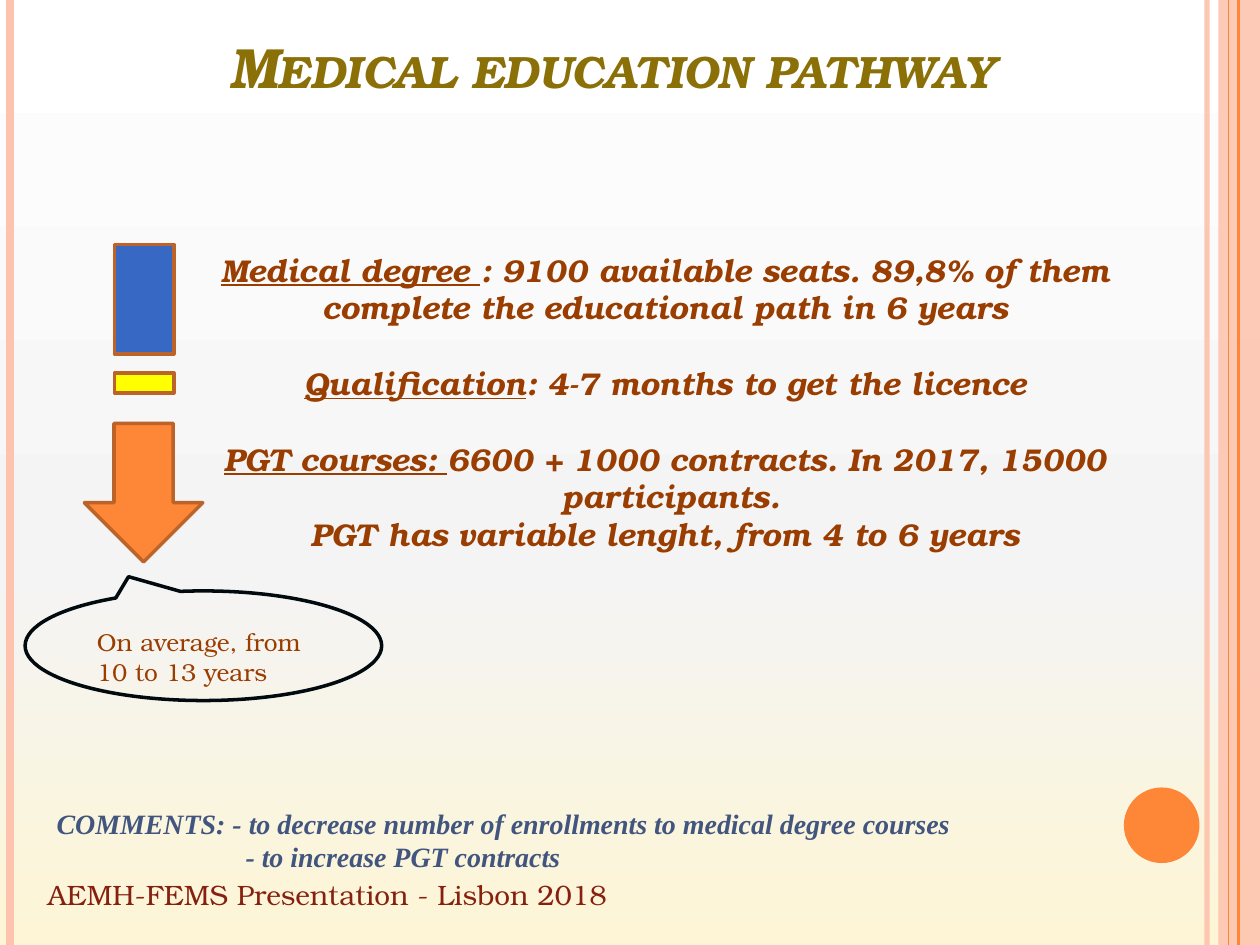
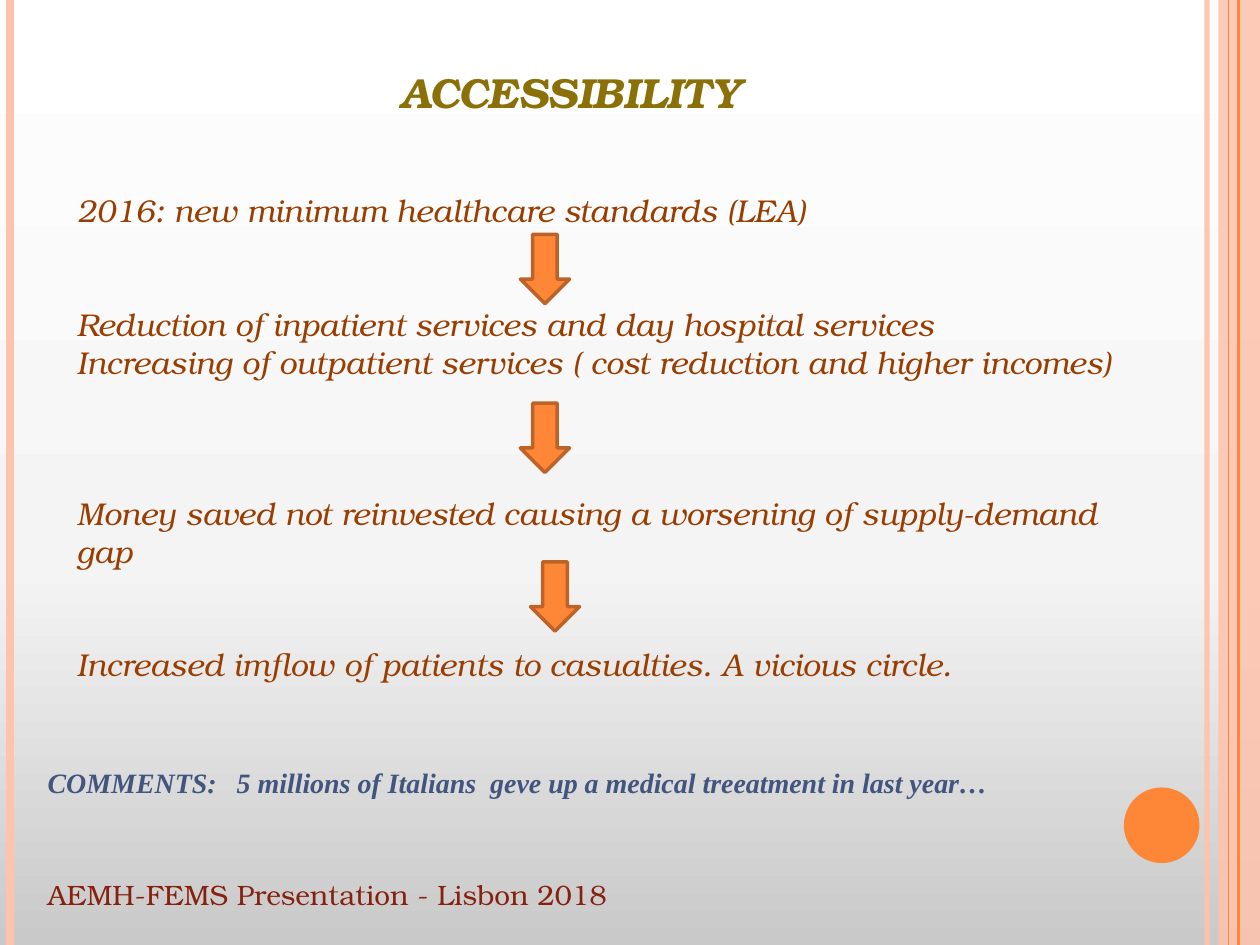
from lxml.etree import SubElement
from pptx import Presentation
from pptx.dml.color import RGBColor
from pptx.enum.shapes import MSO_CONNECTOR, MSO_SHAPE
from pptx.enum.text import MSO_ANCHOR, MSO_AUTO_SIZE, PP_ALIGN
from pptx.oxml.ns import qn
from pptx.util import Inches, Pt

# Colours and fonts
ORANGE = RGBColor(0xFE, 0x86, 0x37)
DARK_ORANGE = RGBColor(0xBC, 0x63, 0x29)
PEACH = RGBColor(0xFE, 0xC3, 0xAE)
OLIVE = RGBColor(0x8A, 0x70, 0x07)
BROWN = RGBColor(0x9A, 0x3D, 0x01)
RED_BROWN = RGBColor(0x86, 0x21, 0x10)
SLATE = RGBColor(0x42, 0x55, 0x7F)
BLUE = RGBColor(0x36, 0x68, 0xC4)
YELLOW = RGBColor(0xFF, 0xFF, 0x00)
INK = RGBColor(0x00, 0x0A, 0x0F)
CREAM = RGBColor(0xFD, 0xF5, 0xD5)
GREY = RGBColor(0xC9, 0xC9, 0xC9)
PALE_GREY = RGBColor(0xF4, 0xF4, 0xF4)
WHITE = RGBColor(0xFF, 0xFF, 0xFF)
SERIF = "TeX Gyre Bonum"
TIMES = "Times New Roman"

SLIDE_WIDTH, SLIDE_HEIGHT = 10, 7.5
BODY_LINE = 21.6  # points taken by one line of body text
COMMENT_INDENT = 1.5

# Text formats
TITLE = {"name": SERIF, "bold": True, "italic": True}
BODY = {"name": SERIF, "size": Pt(18), "italic": True}
STRONG_BODY = {**BODY, "bold": True}
FOOTER = {"name": SERIF, "size": Pt(16)}
CALLOUT = {"name": SERIF, "size": Pt(14)}
COMMENT = {"name": TIMES, "size": Pt(16), "bold": True, "italic": True}

# Shared content: x, colour, width in points, opacity in percent
FOOTER_TEXT = "AEMH-FEMS Presentation - Lisbon 2018"
STRIPES = [(9.58, PEACH, 3, 93), (0.08, PEACH, 4.5, 100),
           (9.83, ORANGE, 1.5, 100), (9.75, ORANGE, 0.75, 100)]

# Pathway content: underlined lead, remaining text, lines left free above
PATHWAY_STEPS = [
    ("Medical degree ", ": 9100 available seats. 89,8% of them complete "
     "the educational path in 6 years", 0),
    ("Qualification", ": 4-7 months to get the licence", 1),
    ("PGT courses: ", "6600 + 1000 contracts. In 2017, 15000", 1),
    ("", " participants.", 0),
    ("", "PGT has variable lenght, from 4 to 6 years", 0),
]
PATHWAY_BLOCKS = [
    (MSO_SHAPE.RECTANGLE, (0.91, 1.94, 0.47, 0.87), BLUE),
    (MSO_SHAPE.RECTANGLE, (0.91, 2.96, 0.47, 0.16), YELLOW),
    (MSO_SHAPE.DOWN_ARROW, (0.67, 3.36, 0.94, 1.1), ORANGE),
]
DURATION = "On average, from 10 to 13 years"
PATHWAY_COMMENTS = [
    "COMMENTS: - to decrease number of enrollments to medical degree courses",
    "\t- to increase PGT contracts",
]

# Accessibility content
ACCESS_STEPS = [
    ("", "2016: new minimum healthcare standards (LEA)", 0),
    ("", "Reduction of inpatient services and day hospital services", 2),
    ("", "Increasing of outpatient services ( cost reduction and higher "
     "incomes)", 0),
    ("", "Money saved not reinvested causing a worsening of supply-demand "
     "gap", 3),
    ("", "Increased imflow of patients to casualties. A vicious circle.", 2),
]
ACCESS_ARROWS = [(4.13, 1.86), (4.13, 3.2), (4.21, 4.46)]
ACCESS_COMMENTS = [
    "COMMENTS:\t5 millions of Italians  geve up a medical treeatment in "
    "last year…",
]


def inches(values):
    return [Inches(value) for value in values]


def set_opacity(fill_parent, percent):
    color = fill_parent.find(".//" + qn("a:srgbClr"))
    SubElement(color, qn("a:alpha"), val=str(percent * 1000))


def add_run(paragraph, text, color, style):
    run = paragraph.add_run()
    run.text = text
    run.font.color.rgb = color
    for name, value in style.items():
        setattr(run.font, name, value)
    return run


def add_block(slide, kind, box, fill=None, line=None):
    shape = slide.shapes.add_shape(kind, *inches(box))
    shape.shadow.inherit = False
    if fill is None:
        shape.fill.background()
    else:
        shape.fill.solid()
        shape.fill.fore_color.rgb = fill
    if line is None:
        shape.line.fill.background()
    else:
        shape.line.color.rgb = line
        shape.line.width = Pt(2)
    return shape


def add_paragraphs(slide, box, items, color, style, align=PP_ALIGN.LEFT):
    """Write (underlined lead, text, free lines above) items in a text box."""
    shape = slide.shapes.add_textbox(*inches(box))
    frame = shape.text_frame
    frame.word_wrap = True
    for index, (lead, text, free_lines) in enumerate(items):
        paragraph = frame.add_paragraph() if index else frame.paragraphs[0]
        paragraph.alignment = align
        if free_lines:
            paragraph.space_before = Pt(free_lines * BODY_LINE)
        if lead:
            add_run(paragraph, lead, color, {**style, "underline": True})
        add_run(paragraph, text, color, style)
    return frame


def add_comments(slide, box, lines):
    frame = add_paragraphs(slide, box, [("", line, 0) for line in lines],
                           SLATE, COMMENT)
    for paragraph in frame.paragraphs:
        properties = paragraph._p.get_or_add_pPr()
        tabs = SubElement(properties, qn("a:tabLst"))
        SubElement(tabs, qn("a:tab"), pos=str(Inches(COMMENT_INDENT)),
                   algn="l")


def paint_background(slide, bottom_color):
    fill = slide.background.fill
    fill.gradient()
    fill.gradient_angle = 90
    stops = slide.element.find(".//" + qn("a:gsLst"))
    for stop in list(stops):
        stops.remove(stop)
    for position, color in [(0, bottom_color), (40, PALE_GREY), (100, WHITE)]:
        stop = SubElement(stops, qn("a:gs"), pos=str(position * 1000))
        SubElement(stop, qn("a:srgbClr"), val=str(color))


def add_decoration(slide):
    # Right band, vertical stripes and disc
    band = add_block(slide, MSO_SHAPE.RECTANGLE,
                     (9.67, 0, SLIDE_WIDTH - 9.67, SLIDE_HEIGHT), PEACH)
    set_opacity(band._element.spPr, 87)
    for x, color, width, opacity in STRIPES:
        stripe = slide.shapes.add_connector(
            MSO_CONNECTOR.STRAIGHT, *inches((x, 0, x, SLIDE_HEIGHT)))
        stripe.line.color.rgb = color
        stripe.line.width = Pt(width)
        properties = stripe._element.spPr
        if opacity < 100:
            set_opacity(properties, opacity)
        SubElement(properties, qn("a:effectLst"))
    add_block(slide, MSO_SHAPE.OVAL, (8.92, 6.25, 0.6, 0.6), ORANGE)

    # Footer
    footer = add_paragraphs(slide, (0.28, 6.9, 5.51, 0.4),
                            [("", FOOTER_TEXT, 0)], RED_BROWN, FOOTER)
    footer.vertical_anchor = MSO_ANCHOR.MIDDLE


def new_slide(presentation, title_text, title_box, title_size, bottom_color):
    slide = presentation.slides.add_slide(presentation.slide_layouts[5])
    paint_background(slide, bottom_color)
    add_decoration(slide)
    title = slide.shapes.title
    title.left, title.top, title.width, title.height = inches(title_box)
    frame = title.text_frame
    frame.word_wrap = True
    frame.auto_size = MSO_AUTO_SIZE.NONE
    frame.vertical_anchor = MSO_ANCHOR.BOTTOM
    paragraph = frame.paragraphs[0]
    paragraph.alignment = PP_ALIGN.CENTER
    run = add_run(paragraph, title_text, OLIVE,
                  {**TITLE, "size": Pt(title_size)})
    run.font._element.set("cap", "small")
    return slide


def build_pathway(presentation):
    slide = new_slide(presentation, "Medical education pathway ",
                      (0.83, 0.21, 8.17, 0.63), 32.4, CREAM)
    add_paragraphs(slide, (1.54, 1.94, 7.48, 3.33), PATHWAY_STEPS, BROWN,
                   STRONG_BODY, PP_ALIGN.CENTER)
    for kind, box, color in PATHWAY_BLOCKS:
        add_block(slide, kind, box, color, DARK_ORANGE)

    # Total duration
    callout = add_block(slide, MSO_SHAPE.OVAL_CALLOUT,
                        (0.2, 4.69, 2.83, 0.87), line=INK)
    callout.adjustments[0] = -0.21
    callout.adjustments[1] = -0.63
    add_paragraphs(slide, (0.67, 4.93, 1.89, 0.57), [("", DURATION, 0)],
                   BROWN, CALLOUT)
    add_comments(slide, (0.35, 6.35, 8.35, 0.64), PATHWAY_COMMENTS)


def build_accessibility(presentation):
    slide = new_slide(presentation, "ACCESSIBILITY ",
                      (2.01, 0.29, 5.12, 0.69), 24, GREY)
    add_paragraphs(slide, (0.51, 1.47, 8.74, 4.64), ACCESS_STEPS, BROWN, BODY)
    for left, top in ACCESS_ARROWS:
        add_block(slide, MSO_SHAPE.DOWN_ARROW, (left, top, 0.39, 0.55),
                  ORANGE, DARK_ORANGE)
    add_comments(slide, (0.28, 6.03, 8.35, 0.37), ACCESS_COMMENTS)


def main():
    presentation = Presentation()
    presentation.slide_width = Inches(SLIDE_WIDTH)
    presentation.slide_height = Inches(SLIDE_HEIGHT)
    build_pathway(presentation)
    build_accessibility(presentation)
    presentation.save("out.pptx")


if __name__ == "__main__":
    main()
